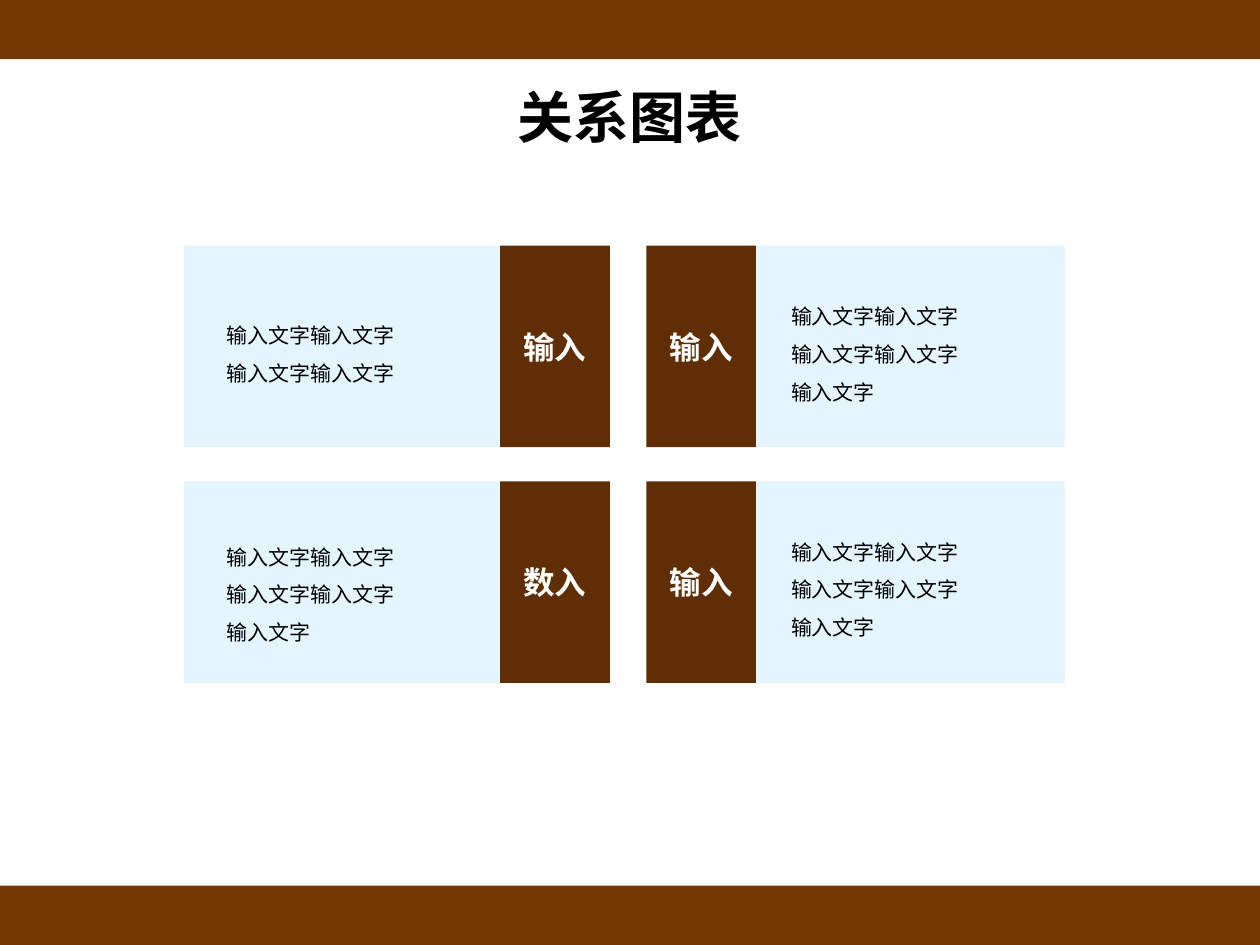
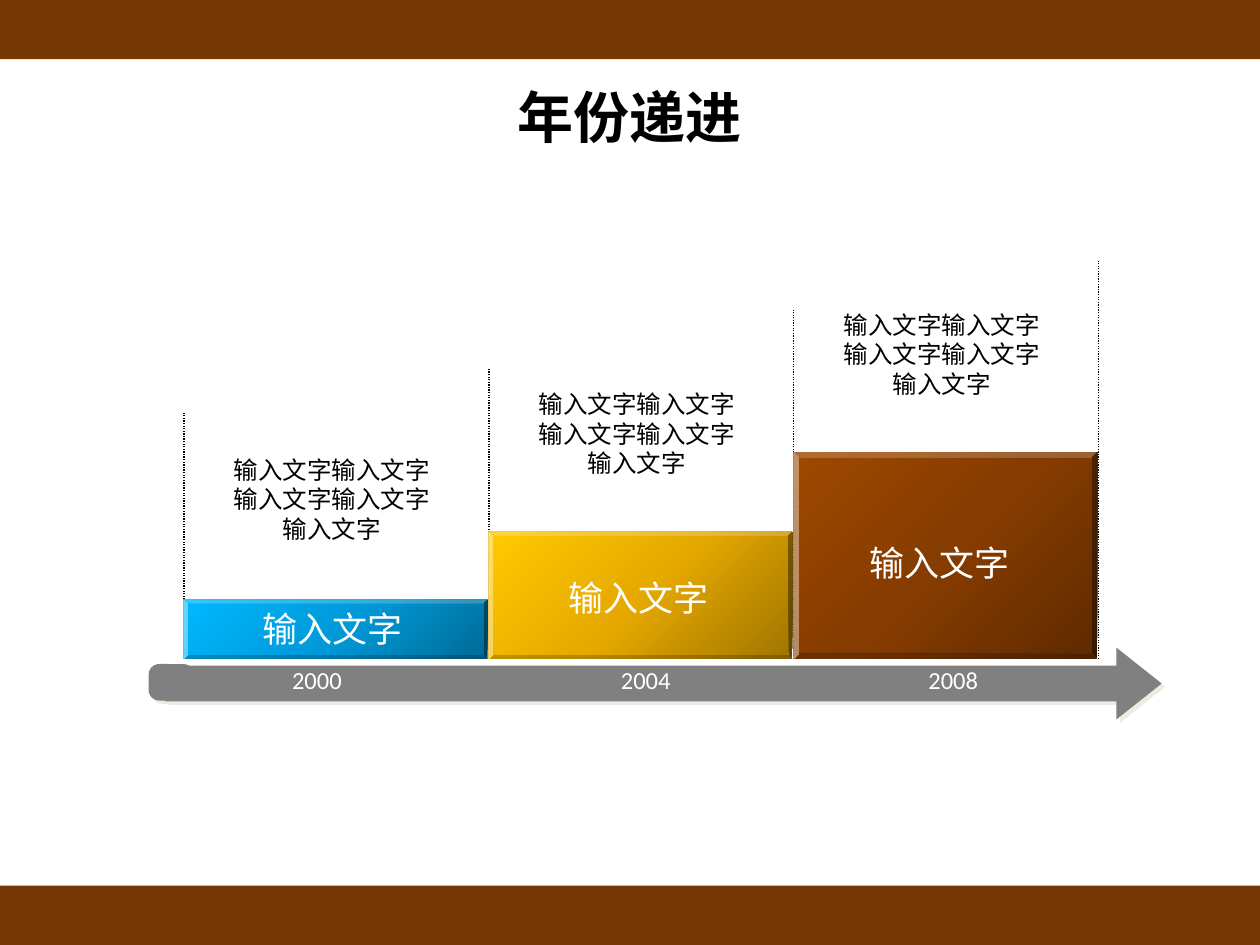
"""Build a two-slide deck: a four-panel relation chart and a stepped year timeline."""
from copy import deepcopy
from lxml.etree import SubElement
from pptx import Presentation
from pptx.dml.color import RGBColor
from pptx.enum.dml import MSO_LINE
from pptx.enum.shapes import MSO_CONNECTOR, MSO_SHAPE as SHAPE
from pptx.enum.text import MSO_ANCHOR as ANCHOR, PP_ALIGN as ALIGN
from pptx.oxml.ns import qn
from pptx.util import Inches, Pt

COLORS = {"band": "753805", "bar": "602E04", "panel": "CCECFF", "axis": "808080",
          "shadow": "EEECE1", "black": "000000", "white": "FFFFFF"}
STEP_COLORS = [("006A96", "009AD9", "00B8FF"),
               ("A07400", "E6A900", "FFCA00"),
               ("5E2A00", "863C00", "9E4800")]
CJK = "Noto Sans CJK SC"
WORD = "输入文字"
THREE_LINES = [WORD * 2, WORD * 2, WORD]

prs = Presentation()
prs.slide_width, prs.slide_height = Inches(10), Inches(7.5)
COL, ROW = prs.slide_width / 100, prs.slide_height / 75


def add(s, box, kind=None, color=None):
    """Place a filled shape, or a text box if no kind is given, on the grid."""
    x, y, w, h = box
    frame = round(x * COL), round(y * ROW), round(w * COL), round(h * ROW)
    if kind is None:
        return s.shapes.add_textbox(*frame)
    sp = s.shapes.add_shape(kind, *frame)
    sp.shadow.inherit = False
    sp.line.fill.background()
    if color:
        sp.fill.solid()
        sp.fill.fore_color.rgb = RGBColor.from_string(COLORS[color])
    return sp


def write(sp, lines, size, color="black", bold=False, align=ALIGN.CENTER,
          font=CJK, spacing=None, anchor=ANCHOR.TOP, wrap=True):
    """Fill a shape with one paragraph per line."""
    tf = sp.text_frame
    tf.word_wrap = wrap
    tf.vertical_anchor = anchor
    for i, line in enumerate(lines):
        p = tf.add_paragraph() if i else tf.paragraphs[0]
        p.alignment = align
        if spacing:
            p.line_spacing = spacing
        r = p.add_run()
        r.text = line
        r.font.size, r.font.bold, r.font.name = Pt(size), bold, font
        r.font.color.rgb = RGBColor.from_string(COLORS[color])
        SubElement(r.font._element, qn("a:ea"), typeface=font)


slides = []
for title in ("关系图表", "年份递进"):
    s = prs.slides.add_slide(prs.slide_layouts[6])
    for top in (0, 70.3):
        add(s, (0, top, 100, 4.7), SHAPE.RECTANGLE, "band")
    write(add(s, (5, 3, 90, 12.5)), [title], 32, bold=True, anchor=ANCHOR.MIDDLE)
    slides.append(s)
relation, timeline = slides

panels = [(59.4, 51.3, 19.5, 3.1, "输入", THREE_LINES),
          (14.6, 39.7, 19.5, 4.6, "输入", THREE_LINES[:2]),
          (59.4, 51.3, 38.2, 3.1, "输入", THREE_LINES),
          (14.6, 39.7, 38.2, 3.5, "数入", THREE_LINES)]
for panel_x, bar_x, y, text_drop, label, lines in panels:
    panel = add(relation, (panel_x, y, 25.1, 16), SHAPE.RECTANGLE, "panel")
    SubElement(panel._element.spPr.find(".//" + qn("a:srgbClr")), qn("a:alpha"), val="50000")
    text = add(relation, (panel_x + 2.4, y + text_drop, 22.7, 3.2 * len(lines)))
    write(text, lines, 12, align=ALIGN.LEFT, spacing=1.5)
    bar = add(relation, (bar_x, y, 8.7, 16), SHAPE.RECTANGLE, "bar")
    write(bar, [label], 18, "white", bold=True, anchor=ANCHOR.MIDDLE, wrap=False)

tail = add(timeline, (11.8, 52.7, 3.6, 2.9), SHAPE.ROUNDED_RECTANGLE, "axis")
tail.adjustments[0] = 0.29
arrow = add(timeline, (13.1, 51.4, 79.1, 5.7), SHAPE.RIGHT_ARROW, "axis")
arrow.adjustments[1] = 0.63
for sp in (tail, arrow):
    effects = sp._element.spPr.find(qn("a:effectLst"))
    shadow = SubElement(effects, qn("a:outerShdw"), dist=str(Pt(2.8)), dir="2700000",
                        algn="ctr", rotWithShape="0")
    SubElement(shadow, qn("a:srgbClr"), val=COLORS["shadow"])

for x, year in ((21.7, "2000"), (47.8, "2004"), (72.2, "2008")):
    write(add(timeline, (x, 52.3, 6.9, 3.3)), [year], 14, "white", font="Calibri")

BASE, LEFT, STEP = 52.3, 14.6, 24.2
for i, top in enumerate((32.7, 29.3, 24.6, 20.7)):
    x = round((LEFT + i * STEP) * COL)
    line = timeline.shapes.add_connector(MSO_CONNECTOR.STRAIGHT, x, round(BASE * ROW),
                                         x, round(top * ROW))
    line.line.width = Pt(0.75)
    line.line.color.rgb = RGBColor.from_string(COLORS["black"])
    line.line.dash_style = MSO_LINE.ROUND_DOT
    SubElement(line._element.spPr, qn("a:effectLst"))

steps = [(47.6, 0.06, 35.6, 17, 47.7),
         (42.2, 0.03, 30.4, 41.3, 45.3),
         (35.9, 0.025, 24.1, 65.2, 42.5)]
for i, (top, edge, note_y, label_x, label_y) in enumerate(steps):
    x = LEFT + i * STEP
    block = add(timeline, (x, top, 24.1, BASE - top), SHAPE.BEVEL)
    block.adjustments[0] = edge
    block.fill.gradient()
    block.fill.gradient_angle = 135
    stops = block.fill._xPr.find(".//" + qn("a:gsLst"))
    stops.append(deepcopy(stops[0]))
    for stop, position, color in zip(block.fill.gradient_stops, (0, 0.5, 1), STEP_COLORS[i]):
        stop.position = position
        stop.color.rgb = RGBColor.from_string(color)
    write(add(timeline, (x, note_y, 23.5, 8.1)), THREE_LINES, 14)
    write(add(timeline, (label_x, label_y, 18.8, 4.3)), [WORD], 20, "white")

prs.save("out.pptx")
